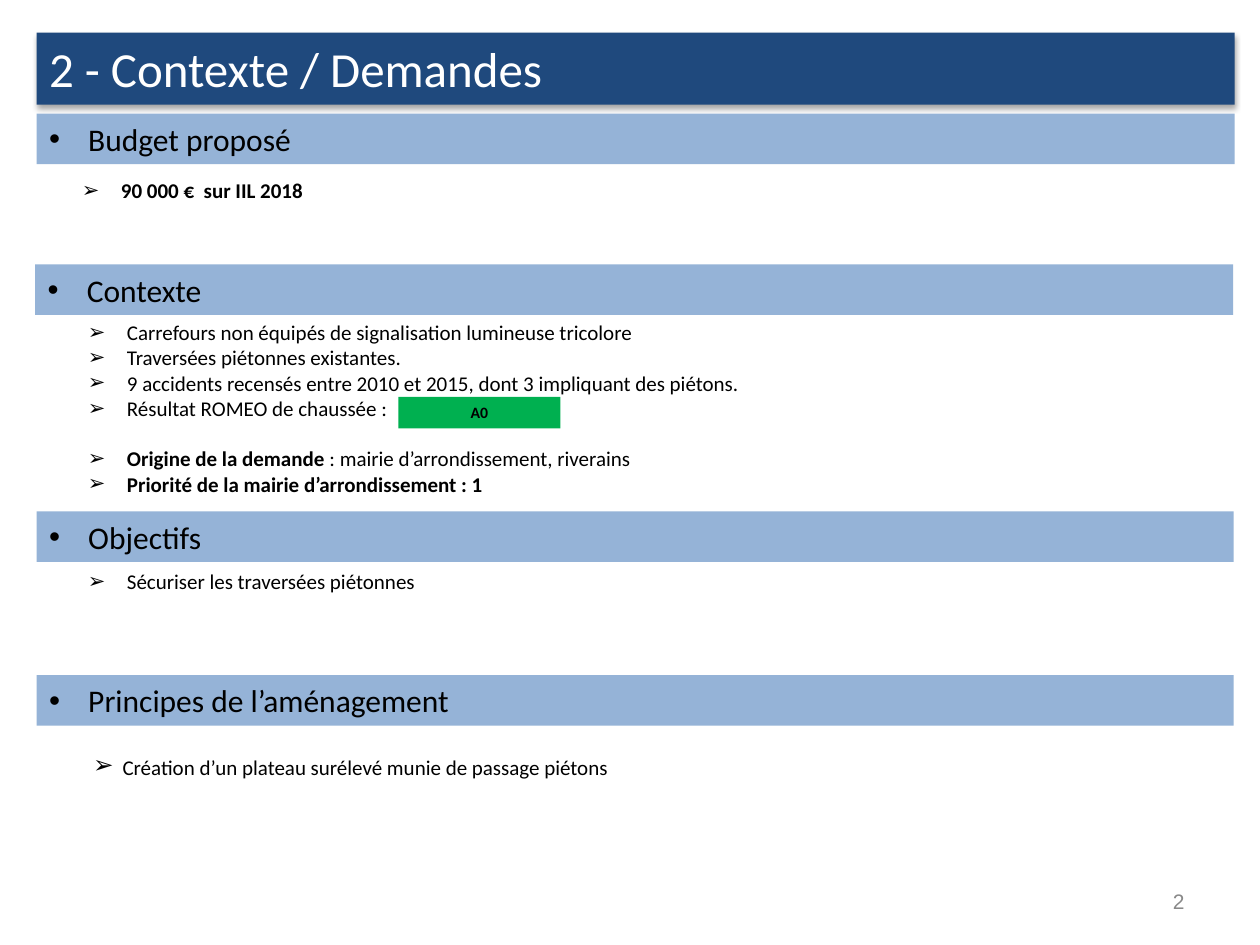
from dataclasses import dataclass

from lxml import etree
from pptx import Presentation
from pptx.dml.color import RGBColor
from pptx.enum.shapes import MSO_SHAPE
from pptx.enum.text import MSO_ANCHOR, PP_ALIGN
from pptx.oxml.ns import qn
from pptx.util import Cm, Pt

RECTANGLE = MSO_SHAPE.RECTANGLE
TOP, MIDDLE = MSO_ANCHOR.TOP, MSO_ANCHOR.MIDDLE
LEFT, CENTER, RIGHT = PP_ALIGN.LEFT, PP_ALIGN.CENTER, PP_ALIGN.RIGHT
JUSTIFY = PP_ALIGN.JUSTIFY


@dataclass(frozen=True)
class Theme:
    """Fonts, colours and type sizes of the slide."""
    font: str = "Calibri"
    number_font: str = "Arial"
    navy: str = "1F497D"
    band: str = "95B3D7"
    green: str = "00B050"
    black: str = "000000"
    white: str = "FFFFFF"
    grey: str = "898989"
    title_size: int = 28
    heading_size: int = 18
    lead_size: int = 14
    body_size: int = 12
    badge_size: int = 9


THEME = Theme()


def add_run(paragraph, text, size, color=THEME.black, bold=False, font=THEME.font):
    """Append one formatted run to a paragraph."""
    run = paragraph.add_run()
    run.text = text
    run.font.name = font
    run.font.size = Pt(size)
    run.font.bold = bold
    run.font.color.rgb = RGBColor.from_string(color)


def set_bullet(paragraph, character, indent):
    """Give a paragraph a bullet with a hanging indent in centimetres."""
    properties = paragraph._p.get_or_add_pPr()
    properties.set("marL", str(Cm(indent)))
    properties.set("indent", str(-Cm(indent)))
    etree.SubElement(properties, qn("a:buFont"), typeface="Arial")
    etree.SubElement(properties, qn("a:buChar"), char=character)


def add_shadow(shape):
    """Give a shape a soft shadow falling straight down."""
    effects = shape._element.spPr.find(qn("a:effectLst"))
    shadow = etree.SubElement(effects, qn("a:outerShdw"), blurRad=str(Pt(3.1)),
                              dist=str(Pt(1.8)), dir="5400000", rotWithShape="0")
    color = etree.SubElement(shadow, qn("a:srgbClr"), val=THEME.black)
    etree.SubElement(color, qn("a:alpha"), val="35000")


def add_bar(slide, left, top, width, height, fill):
    """Add a filled rectangle and return it with its first paragraph."""
    shape = slide.shapes.add_shape(RECTANGLE, Cm(left), Cm(top), Cm(width), Cm(height))
    shape.shadow.inherit = False
    shape.fill.solid()
    shape.fill.fore_color.rgb = RGBColor.from_string(fill)
    shape.line.fill.background()
    shape.text_frame.vertical_anchor = TOP
    paragraph = shape.text_frame.paragraphs[0]
    paragraph.alignment = LEFT
    return shape, paragraph


def add_text_box(slide, left, top, width, height, anchor=TOP):
    """Add a wrapping text box and return its frame."""
    frame = slide.shapes.add_textbox(Cm(left), Cm(top), Cm(width), Cm(height)).text_frame
    frame.word_wrap = True
    frame.vertical_anchor = anchor
    return frame


def add_title(slide, text):
    """Add the shadowed title bar."""
    shape, paragraph = add_bar(slide, 0.74, 0.66, 24.15, 1.45, THEME.navy)
    add_shadow(shape)
    add_run(paragraph, text, THEME.title_size, THEME.white)


def add_heading(slide, text, left, top, width):
    """Add a bulleted section band."""
    _, paragraph = add_bar(slide, left, top, width, 1.02, THEME.band)
    set_bullet(paragraph, "•", 0.79)
    add_run(paragraph, text, THEME.heading_size)


def add_list(slide, box, items, alignment=LEFT, indent=0.79, gap_before=None):
    """Add arrow-bulleted items, each a list of (text, size, bold) runs."""
    frame = add_text_box(slide, *box)
    for index, runs in enumerate(items):
        paragraph = frame.add_paragraph() if index else frame.paragraphs[0]
        paragraph.alignment = alignment
        set_bullet(paragraph, "➢", indent)
        if index == gap_before:
            paragraph.space_before = Pt(14.5)
        for text, size, bold in runs:
            add_run(paragraph, text, size, bold=bold)


def add_badge(slide, text):
    """Add the green rating badge."""
    _, paragraph = add_bar(slide, 8.03, 8, 3.27, 0.64, THEME.green)
    paragraph.alignment = CENTER
    add_run(paragraph, text, THEME.badge_size, bold=True)


def add_page_number(slide, text):
    """Add the page number at the bottom right."""
    paragraph = add_text_box(slide, 18.2, 17.65, 5.93, 1.02, MIDDLE).paragraphs[0]
    paragraph.alignment = RIGHT
    add_run(paragraph, text, THEME.body_size, THEME.grey, font=THEME.number_font)


def main():
    """Build the slide and save it."""
    presentation = Presentation()
    presentation.slide_width, presentation.slide_height = Cm(25.4), Cm(19.05)
    slide = presentation.slides.add_slide(presentation.slide_layouts[6])
    body = THEME.body_size

    add_title(slide, "2 - Contexte / Demandes")
    for text, left, top, width in (
        ("Budget proposé", 0.74, 2.29, 24.15),
        ("Contexte", 0.71, 5.33, 24.15),
        ("Objectifs", 0.74, 10.31, 24.13),
        ("Principes de l’aménagement", 0.74, 13.61, 24.13),
    ):
        add_heading(slide, text, left, top, width)

    add_list(slide, (1.4, 3.45, 22.71, 0.76), [[("90 000 €  sur IIL 2018", body, True)]])
    add_list(slide, (1.52, 6.32, 22.99, 4.45), [
        [("Carrefours non équipés de signalisation lumineuse tricolore", body, False)],
        [("Traversées piétonnes existantes.", body, False)],
        [("9 accidents recensés entre 2010 et 2015, dont 3 impliquant des piétons.",
          body, False)],
        [("Résultat ROMEO de chaussée :", body, False)],
        [("Origine de la demande ", body, True),
         (": mairie d’arrondissement, riverains", body, False)],
        [("Priorité de la mairie d’arrondissement : 1", body, True)],
    ], JUSTIFY, gap_before=4)
    add_list(slide, (1.52, 11.33, 22.63, 0.76),
             [[("Sécuriser les traversées piétonnes", body, False)]])
    add_list(slide, (1.63, 15.01, 22.28, 0.86), [
        [(" ", THEME.lead_size, False),
         ("Création d’un plateau surélevé munie de passage piétons", body, False)],
    ], JUSTIFY, indent=0.48)
    add_badge(slide, "A0")
    add_page_number(slide, "2")
    presentation.save("out.pptx")


if __name__ == "__main__":
    main()
